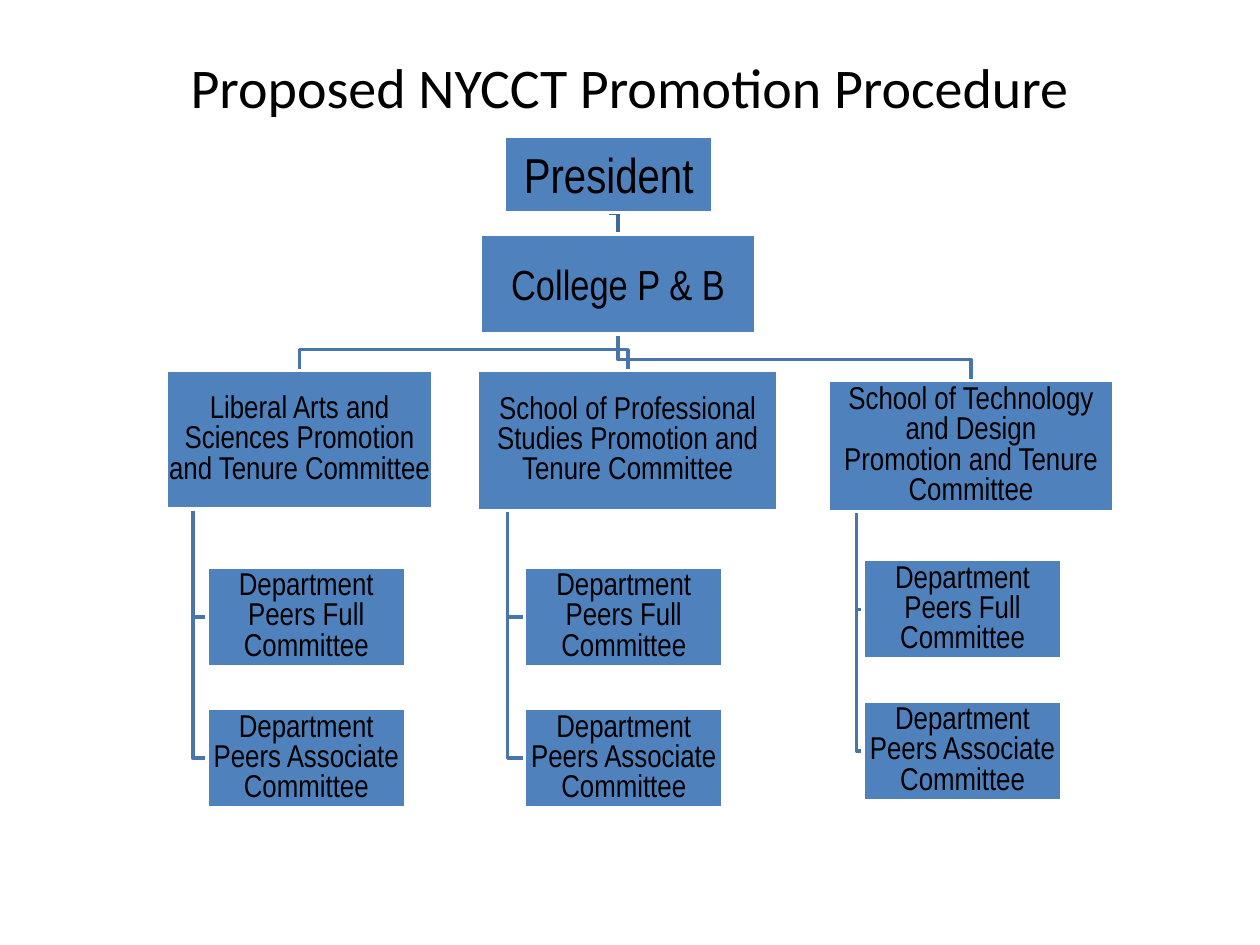
"""Build the promotion procedure organisation chart slide."""
from dataclasses import dataclass

from pptx import Presentation
from pptx.dml.color import RGBColor
from pptx.enum.shapes import MSO_SHAPE as Preset
from pptx.enum.text import MSO_ANCHOR as Anchor, PP_ALIGN as Align
from pptx.util import Cm, Pt

WHITE = RGBColor(0xFF, 0xFF, 0xFF)
BLACK = RGBColor(0x00, 0x00, 0x00)
BOX_BLUE = RGBColor(0x4F, 0x81, 0xBD)
TOP_LINK_BLUE = RGBColor(0x3F, 0x67, 0x97)
LINK_BLUE = RGBColor(0x48, 0x75, 0xAC)
LINE_WIDTH = Pt(2)
DEPARTMENT_WIDTH, DEPARTMENT_HEIGHT, DEPARTMENT_STEP = 4.01, 2.01, 2.85
BEND_HEIGHT = 0.42
STEM_SHARE = 0.1
DEPARTMENTS = ("Department Peers Full Committee", "Department Peers Associate Committee")


@dataclass(frozen=True)
class Unit:
    """A box of the chart, with lengths in centimetres."""
    text: str
    left: float
    top: float
    width: float
    height: float
    size: int = 18
    spacing: float = 0.8
    inset: float = 0.03

    @property
    def center(self) -> float:
        return self.left + self.width / 2

    @property
    def middle(self) -> float:
        return self.top + self.height / 2

    @property
    def bottom(self) -> float:
        return self.top + self.height


@dataclass(frozen=True)
class School:
    """A school committee and the place of its first department."""
    committee: Unit
    department_left: float
    department_top: float

    def departments(self) -> list[Unit]:
        return [
            Unit(text, self.department_left, self.department_top + row * DEPARTMENT_STEP,
                 DEPARTMENT_WIDTH, DEPARTMENT_HEIGHT)
            for row, text in enumerate(DEPARTMENTS)
        ]


PRESIDENT = Unit("President", 10.16, 2.74, 4.22, 1.55, 28, 1.0, 0.05)
COLLEGE = Unit("College P & B", 9.68, 4.72, 5.56, 2.01, 24, 1.0, 0.05)
SCHOOLS = (
    School(Unit("Liberal Arts and Sciences Promotion and Tenure Committee",
                3.35, 7.47, 5.38, 2.79), 4.17, 11.43),
    School(Unit("School of Professional Studies Promotion and Tenure Committee",
                9.63, 7.47, 6.05, 2.82), 10.57, 11.43),
    School(Unit("School of Technology and Design\nPromotion and Tenure Committee",
                16.69, 7.67, 5.77, 2.64), 17.4, 11.28),
)


def write_text(frame, text: str, size: int, font_name: str, spacing: float = 1.0) -> None:
    """Fill a text frame with centred black text."""
    frame.word_wrap = True
    frame.text = text
    for para in frame.paragraphs:
        para.alignment = Align.CENTER
        para.line_spacing = spacing
        for span in para.runs:
            for name, value in {"name": font_name, "size": Pt(size)}.items():
                setattr(span.font, name, value)
            span.font.color.rgb = BLACK


def draw_unit(page, unit: Unit) -> None:
    """Draw one labelled rectangle."""
    lengths = (Cm(value) for value in (unit.left, unit.top, unit.width, unit.height))
    box = page.shapes.add_shape(Preset.RECTANGLE, *lengths)
    box.shadow.inherit = False
    box.fill.solid()
    box.fill.fore_color.rgb = BOX_BLUE
    box.line.color.rgb = WHITE
    box.line.width = LINE_WIDTH
    frame = box.text_frame
    for side in ("left", "top", "right", "bottom"):
        setattr(frame, f"margin_{side}", Cm(unit.inset))
    frame.vertical_anchor = Anchor.MIDDLE
    write_text(frame, unit.text, unit.size, "Arial Narrow", unit.spacing)


def draw_link(page, points: list[tuple[float, float]], color: RGBColor = LINK_BLUE) -> None:
    """Draw an open bent line through the points."""
    start, *rest = [(Cm(x), Cm(y)) for x, y in points]
    builder = page.shapes.build_freeform(*start)
    builder.add_line_segments(rest, close=False)
    link = builder.convert_to_shape()
    link.shadow.inherit = False
    link.fill.background()
    link.line.color.rgb = color
    link.line.width = LINE_WIDTH


def draw_school_links(page, school: School) -> None:
    """Link a school to the college and to its departments."""
    committee = school.committee
    bend = committee.top - BEND_HEIGHT
    draw_link(page, [(COLLEGE.center, COLLEGE.bottom), (COLLEGE.center, bend),
                     (committee.center, bend), (committee.center, committee.top)])
    stem = committee.left + committee.width * STEM_SHARE
    for department in school.departments():
        draw_link(page, [(stem, committee.bottom), (stem, department.middle),
                         (department.left, department.middle)])


def main() -> None:
    """Assemble and save the slide."""
    deck = Presentation()
    deck.slide_width, deck.slide_height = Cm(25.4), Cm(19.05)
    page = deck.slides.add_slide(deck.slide_layouts[6])

    for school in SCHOOLS:
        draw_school_links(page, school)
    draw_link(page, [(PRESIDENT.center, PRESIDENT.bottom), (COLLEGE.center, PRESIDENT.bottom),
                     (COLLEGE.center, COLLEGE.top)], TOP_LINK_BLUE)

    for unit in (PRESIDENT, COLLEGE):
        draw_unit(page, unit)
    for school in SCHOOLS:
        for unit in (school.committee, *school.departments()):
            draw_unit(page, unit)

    title = page.shapes.add_textbox(Cm(1.27), Cm(0.76), Cm(22.86), Cm(1.78))
    title.text_frame.vertical_anchor = Anchor.BOTTOM
    write_text(title.text_frame, "Proposed NYCCT Promotion Procedure", 32, "Calibri")

    deck.save("out.pptx")


if __name__ == "__main__":
    main()
